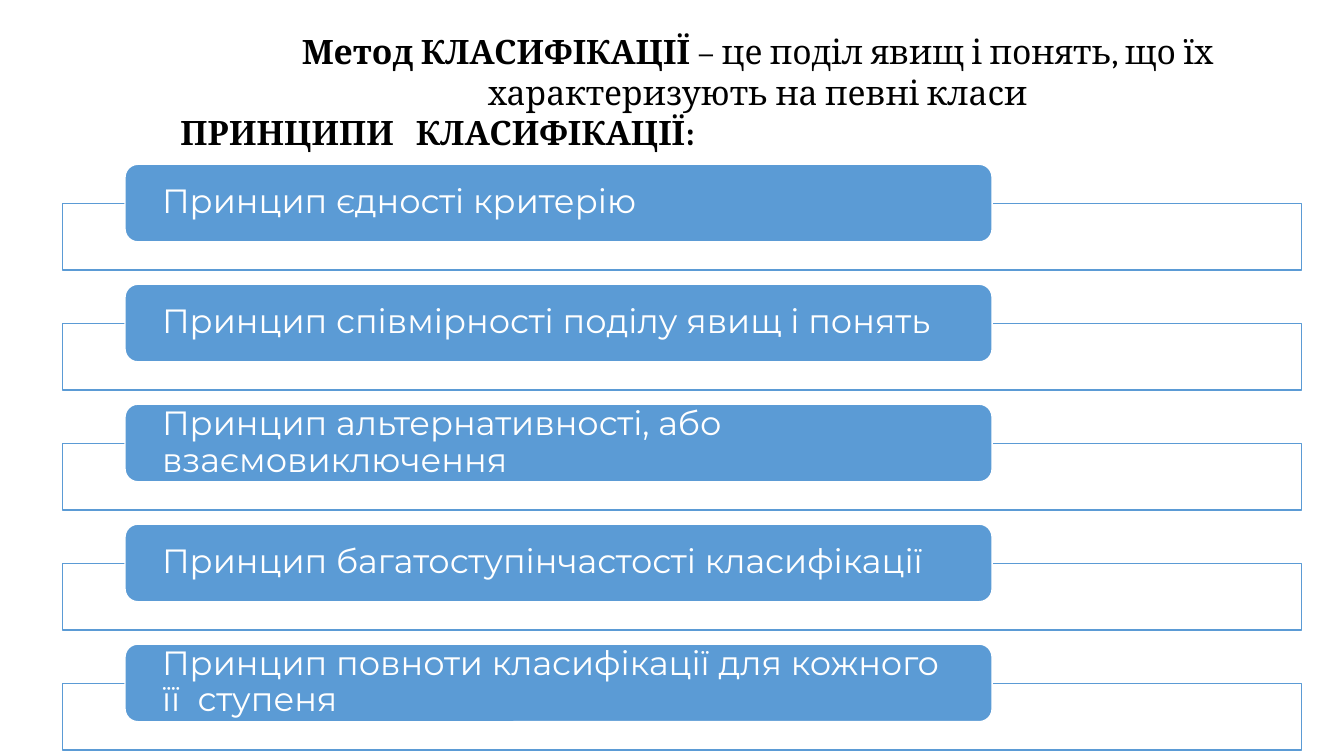
from pptx import Presentation
from pptx.dml.color import RGBColor
from pptx.enum.shapes import MSO_SHAPE
from pptx.enum.text import MSO_ANCHOR, PP_ALIGN
from pptx.oxml.ns import qn
from pptx.util import Inches, Pt
from lxml.etree import SubElement

BLUE, WHITE, BLACK = "5B9BD5", "FFFFFF", "000000"
PRINCIPLES = [
    "Принцип єдності критерію",
    "Принцип співмірності поділу явищ і понять",
    "Принцип альтернативності, або взаємовиключення",
    "Принцип багатоступінчастості класифікації",
    "Принцип повноти класифікації для кожного її  ступеня",
]
ROW_STEP = 1.19


def add_span(para, text, font, color, bold=False):
    span = para.add_run()
    span.text = text
    span.font.name = font
    span.font.size = Pt(24)
    span.font.bold = bold
    span.font.color.rgb = RGBColor.from_string(color)


def add_block(kind, left, top, width, height, fill, line):
    block = page.shapes.add_shape(
        kind, Inches(left), Inches(top), Inches(width), Inches(height))
    block.shadow.inherit = False
    block.fill.solid()
    block.fill.fore_color.rgb = RGBColor.from_string(fill)
    block.line.color.rgb = RGBColor.from_string(line)
    block.line.width = Pt(1)
    return block


deck = Presentation()
deck.slide_width, deck.slide_height = Inches(13.33), Inches(7.5)
page = deck.slides.add_slide(deck.slide_layouts[6])

# Definition and heading
box = page.shapes.add_textbox(Inches(1.69), Inches(0.26), Inches(11.65), Inches(1.3))
box.text_frame.word_wrap = True
para = box.text_frame.paragraphs[0]
para.alignment = PP_ALIGN.CENTER
add_span(para, "Метод КЛАСИФІКАЦІЇ ", "Cambria", BLACK, bold=True)
add_span(para, "– це поділ явищ і понять, що їх характеризують на певні класи",
         "Cambria", BLACK)
para = box.text_frame.add_paragraph()
add_span(para, "ПРИНЦИПИ   КЛАСИФІКАЦІЇ:", "Cambria", BLACK, bold=True)

# One frame with a rounded label for each principle
for row, principle in enumerate(PRINCIPLES):
    top = 1.63 + row * ROW_STEP
    frame = add_block(MSO_SHAPE.RECTANGLE, 0.62, top + 0.39, 12.29, 0.66, WHITE, BLUE)
    frame_color = frame.fill._xPr.find(qn("a:solidFill"))[0]
    SubElement(frame_color, qn("a:alpha")).set("val", "90000")

    label = add_block(MSO_SHAPE.ROUNDED_RECTANGLE, 1.24, top, 8.6, 0.77, BLUE, WHITE)
    text = label.text_frame
    text.word_wrap = True
    text.vertical_anchor = MSO_ANCHOR.MIDDLE
    text.margin_left = text.margin_right = Inches(0.33)
    text.margin_top = text.margin_bottom = 0
    para = text.paragraphs[0]
    para.alignment = PP_ALIGN.LEFT
    para.line_spacing = 0.9
    add_span(para, principle, "Montserrat", WHITE)

deck.save("out.pptx")
